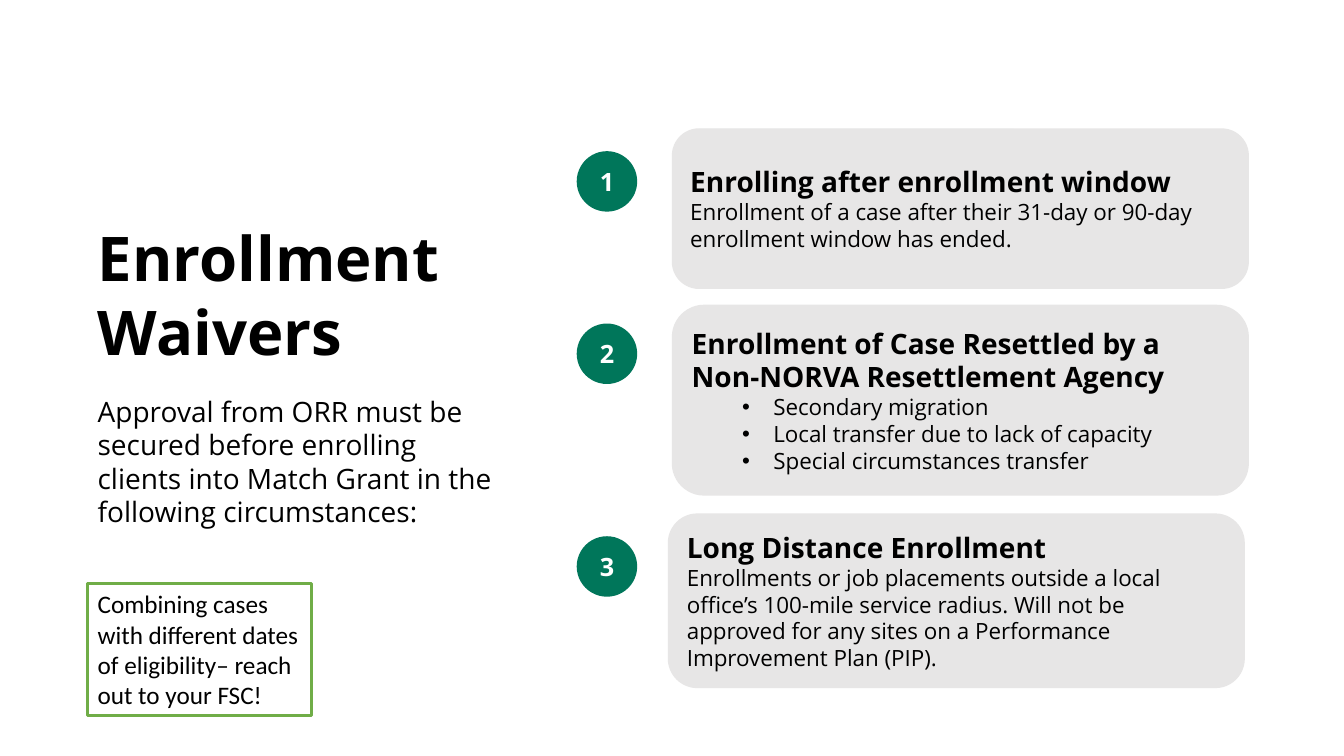
import dataclasses

import lxml.etree
import pptx
import pptx.dml.color
import pptx.enum.shapes
import pptx.enum.text
import pptx.oxml.ns
import pptx.util

PX = 9144
SHAPES = pptx.enum.shapes.MSO_SHAPE
ALIGN = pptx.enum.text.PP_ALIGN
ANCHOR = pptx.enum.text.MSO_ANCHOR


@dataclasses.dataclass(frozen=True)
class Theme:
    """Colours, fonts and type sizes of the slide."""
    ink: str = "000000"
    paper: str = "FFFFFF"
    badge: str = "00765A"
    card: str = "E7E6E6"
    frame: str = "70AD47"
    font: str = "Open Sans"
    note_font: str = "Calibri"
    title: int = 44
    heading: int = 20
    label: int = 18
    detail: int = 16


THEME = Theme()


def rgb(value):
    """Turn a hex string into a colour."""
    return pptx.dml.color.RGBColor.from_string(value)


def box(left, top, width, height):
    """Scale a box given in px to EMU."""
    return [value * PX for value in (left, top, width, height)]


def add_run(paragraph, text, size=THEME.detail, bold=False, color=THEME.ink, font=THEME.font):
    """Append formatted text to a paragraph."""
    run = paragraph.add_run()
    run.text = text
    run.font.size = pptx.util.Pt(size)
    run.font.bold = bold
    run.font.name = font
    run.font.color.rgb = rgb(color)


def prepare_frame(shape, anchor=ANCHOR.TOP, align=ALIGN.LEFT):
    """Set wrapping and alignment, and return the first paragraph."""
    shape.text_frame.word_wrap = True
    shape.text_frame.vertical_anchor = anchor
    paragraph = shape.text_frame.paragraphs[0]
    paragraph.alignment = align
    return paragraph


def fit_to_text(shape):
    """Let a shape grow with its text."""
    shape.text_frame.auto_size = pptx.enum.text.MSO_AUTO_SIZE.SHAPE_TO_FIT_TEXT


def add_text(slide, bounds, text, **style):
    """Add a plain text box."""
    shape = slide.shapes.add_textbox(*box(*bounds))
    add_run(prepare_frame(shape), text, **style)
    fit_to_text(shape)


def add_filled_shape(slide, kind, bounds, fill, line=None, weight=1):
    """Add a flat preset shape with an optional outline."""
    shape = slide.shapes.add_shape(kind, *box(*bounds))
    shape.shadow.inherit = False
    shape.fill.solid()
    shape.fill.fore_color.rgb = rgb(fill)
    if line:
        shape.line.color.rgb = rgb(line)
        shape.line.width = pptx.util.Pt(weight)
    else:
        shape.line.fill.background()
    return shape


def add_badge(slide, number, top):
    """Add a numbered circle."""
    shape = add_filled_shape(slide, SHAPES.OVAL, (572, top, 60, 60), THEME.badge)
    paragraph = prepare_frame(shape, ANCHOR.MIDDLE, ALIGN.CENTER)
    add_run(paragraph, str(number), size=THEME.label, bold=True, color=THEME.paper)


def add_bullet(text_frame, text):
    """Add an indented bullet paragraph."""
    paragraph = text_frame.add_paragraph()
    paragraph.alignment = ALIGN.LEFT
    paragraph.level = 1
    properties = paragraph._p.get_or_add_pPr()
    properties.set("marL", str(81 * PX))
    properties.set("indent", str(-31 * PX))
    font = lxml.etree.SubElement(properties, pptx.oxml.ns.qn("a:buFont"))
    font.set("typeface", "Arial")
    bullet = lxml.etree.SubElement(properties, pptx.oxml.ns.qn("a:buChar"))
    bullet.set("char", "•")
    add_run(paragraph, text)


def add_card(slide, bounds, heading, detail="", bullets=()):
    """Add a rounded card with a heading and its details."""
    shape = add_filled_shape(slide, SHAPES.ROUNDED_RECTANGLE, bounds, THEME.card, THEME.card)
    paragraph = prepare_frame(shape, ANCHOR.MIDDLE)
    add_run(paragraph, heading, size=THEME.heading, bold=True)
    if detail:
        paragraph.add_line_break()
        add_run(paragraph, detail)
    for bullet in bullets:
        add_bullet(shape.text_frame, bullet)


def add_note(slide, bounds, text):
    """Add a framed note."""
    shape = add_filled_shape(slide, SHAPES.RECTANGLE, bounds, THEME.paper, THEME.frame, 2.25)
    add_run(prepare_frame(shape), text, size=THEME.label, font=THEME.note_font)
    fit_to_text(shape)


def main():
    """Build and save the slide."""
    presentation = pptx.Presentation()
    presentation.slide_width = 1333 * PX
    presentation.slide_height = 750 * PX
    slide = presentation.slides.add_slide(presentation.slide_layouts[6])

    add_text(slide, (87, 213, 387, 158), "Enrollment Waivers", size=THEME.title, bold=True)
    add_text(
        slide, (87, 386, 417, 145),
        "Approval from ORR must be secured before enrolling clients into Match Grant "
        "in the following circumstances:",
        size=THEME.heading,
    )

    waivers = [
        (150, (667, 128, 571, 158), {
            "heading": "Enrolling after enrollment window",
            "detail": "Enrollment of a case after their 31-day or 90-day enrollment window has ended.",
        }),
        (321, (667, 303, 571, 188), {
            "heading": "Enrollment of Case Resettled by a Non-NORVA Resettlement Agency",
            "bullets": (
                "Secondary migration",
                "Local transfer due to lack of capacity",
                "Special circumstances transfer",
            ),
        }),
        (532, (663, 510, 571, 172), {
            "heading": "Long Distance Enrollment",
            "detail": "Enrollments or job placements outside a local office’s 100-mile service "
                      "radius. Will not be approved for any sites on a Performance "
                      "Improvement Plan (PIP).",
        }),
    ]
    for number, (badge_top, bounds, content) in enumerate(waivers, start=1):
        add_badge(slide, number, badge_top)
        add_card(slide, bounds, **content)

    add_note(
        slide, (87, 579, 222, 131),
        "Combining cases with different dates of eligibility– reach out to your FSC!",
    )
    presentation.save("out.pptx")


if __name__ == "__main__":
    main()
